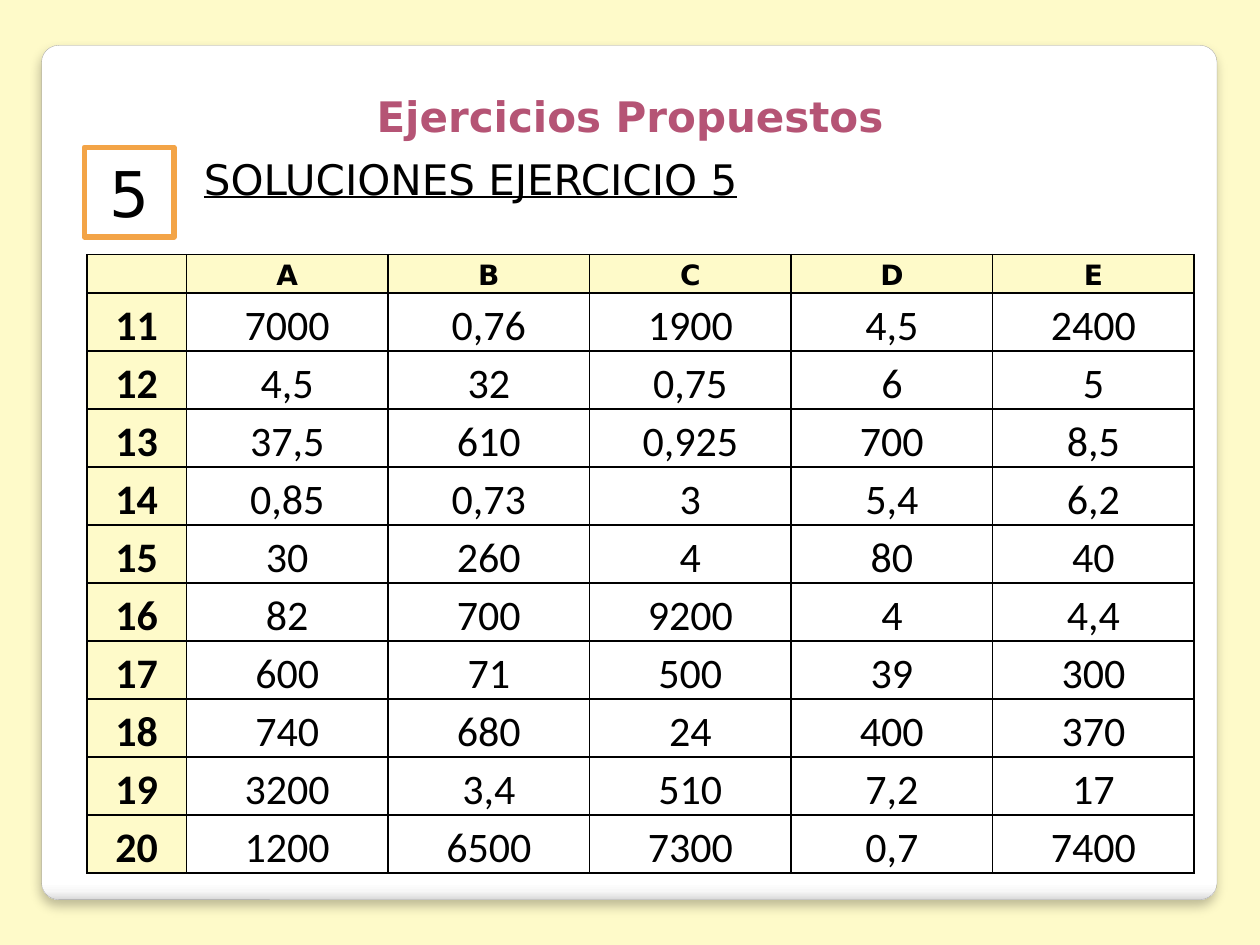
from lxml.etree import SubElement
from pptx import Presentation
from pptx.dml.color import RGBColor
from pptx.enum.shapes import MSO_SHAPE
from pptx.enum.text import MSO_ANCHOR, MSO_AUTO_SIZE, PP_ALIGN
from pptx.oxml.ns import qn
from pptx.util import Inches, Pt

CREAM = "FEFAC9"
SANS = "DejaVu Sans"
HEADS = ["", "A", "B", "C", "D", "E"]
ROWS = [
    ["11", "7000", "0,76", "1900", "4,5", "2400"],
    ["12", "4,5", "32", "0,75", "6", "5"],
    ["13", "37,5", "610", "0,925", "700", "8,5"],
    ["14", "0,85", "0,73", "3", "5,4", "6,2"],
    ["15", "30", "260", "4", "80", "40"],
    ["16", "82", "700", "9200", "4", "4,4"],
    ["17", "600", "71", "500", "39", "300"],
    ["18", "740", "680", "24", "400", "370"],
    ["19", "3200", "3,4", "510", "7,2", "17"],
    ["20", "1200", "6500", "7300", "0,7", "7400"],
]


def paint(fill, color):
    fill.solid()
    fill.fore_color.rgb = RGBColor.from_string(color)


def node(parent, tag, **attrs):
    return SubElement(parent, qn(tag), {k: str(v) for k, v in attrs.items()})


def tint(parent, color):
    return node(parent, "a:srgbClr", val=color)


def write(frame, text, size=24, font=SANS, color="000000", bold=False,
          under=False, align=PP_ALIGN.CENTER, lead=None):
    para = frame.paragraphs[0]
    para.alignment = align
    if lead:
        para.line_spacing = lead
    run = para.add_run()
    run.text = text
    run.font.size = Pt(size)
    run.font.name = font
    run.font.bold = bold
    run.font.underline = under
    paint(run.font.fill, color)


def add_label(slide, box, text, **style):
    frame = slide.shapes.add_textbox(*map(Inches, box)).text_frame
    frame.word_wrap = True
    frame.auto_size = MSO_AUTO_SIZE.SHAPE_TO_FIT_TEXT
    write(frame, text, **style)


def add_panel(slide, box):
    panel = slide.shapes.add_shape(MSO_SHAPE.ROUNDED_RECTANGLE, *map(Inches, box))
    panel.adjustments[0] = 0.02
    panel.fill.gradient()
    panel.fill.gradient_angle = 270
    props = panel.element.spPr
    stops = props.find(qn("a:gradFill")).find(qn("a:gsLst"))
    stops.clear()
    for pos, color in [(0, "FFFFFF"), (98, "FFFFFF"), (99, "F7F7F7"), (100, "DADADA")]:
        tint(node(stops, "a:gs", pos=pos * 1000), color)
    paint(panel.line.fill, "A4A4A4")
    panel.line.width = Pt(0.16)
    glow = node(node(props, "a:effectLst"), "a:outerShdw", blurRad=Pt(6),
                dist=Pt(4), dir=5400000, algn="t", rotWithShape=0)
    node(tint(glow, "000000"), "a:alpha", val=25000)


def add_badge(slide, box, text):
    badge = slide.shapes.add_shape(MSO_SHAPE.RECTANGLE, *map(Inches, box))
    badge.shadow.inherit = False
    paint(badge.fill, "FFFFFF")
    paint(badge.line.fill, "F3A447")
    badge.line.width = Pt(3.35)
    write(badge.text_frame, text, size=36)


def add_head(slide, box):
    left, top, width, height = box
    add_label(slide, (left, top, width, 0.5), "Ejercicios Propuestos",
              color="B55475", bold=True)
    add_badge(slide, (left + 0.28, top + 0.5, 0.71, 0.71), "5")
    add_label(slide, (left + 1.13, top + 0.5, 7.95, 0.5), "SOLUCIONES EJERCICIO 5",
              under=True, align=PP_ALIGN.LEFT)


def frame_cell(cell):
    for side in ("a:lnL", "a:lnR", "a:lnT", "a:lnB"):
        line = node(cell._tc.get_or_add_tcPr(), side, w=Pt(1))
        tint(node(line, "a:solidFill"), "000000")


def add_grid(slide, box):
    data = [HEADS] + ROWS
    table = slide.shapes.add_table(len(data), len(HEADS), *map(Inches, box)).table
    first = 0.79
    for i, col in enumerate(table.columns):
        col.width = Inches((box[2] - first) / (len(HEADS) - 1) if i else first)
    for r, row in enumerate(data):
        table.rows[r].height = Inches(0.41 if r else 0.28)
        for c, text in enumerate(row):
            cell = table.cell(r, c)
            frame_cell(cell)
            cell.margin_left = cell.margin_right = Inches(0.07)
            cell.margin_top = cell.margin_bottom = 0
            edge = r == 0 or c == 0
            if edge:
                paint(cell.fill, CREAM)
            else:
                cell.fill.background()
                if r < 6:
                    cell.vertical_anchor = MSO_ANCHOR.MIDDLE
            write(cell.text_frame, text, size=24 if r else 16,
                  font="Calibri" if r else SANS, bold=edge, lead=1.15)


def main():
    deck = Presentation()
    deck.slide_width, deck.slide_height = Inches(10), Inches(7.5)
    slide = deck.slides.add_slide(deck.slide_layouts[6])
    paint(slide.background.fill, CREAM)
    add_panel(slide, (0.33, 0.36, 9.33, 6.78))
    add_head(slide, (0.39, 0.67, 9.22, 1.21))
    add_grid(slide, (0.69, 2.02, 8.79, 4.38))
    deck.save("out.pptx")


if __name__ == "__main__":
    main()
